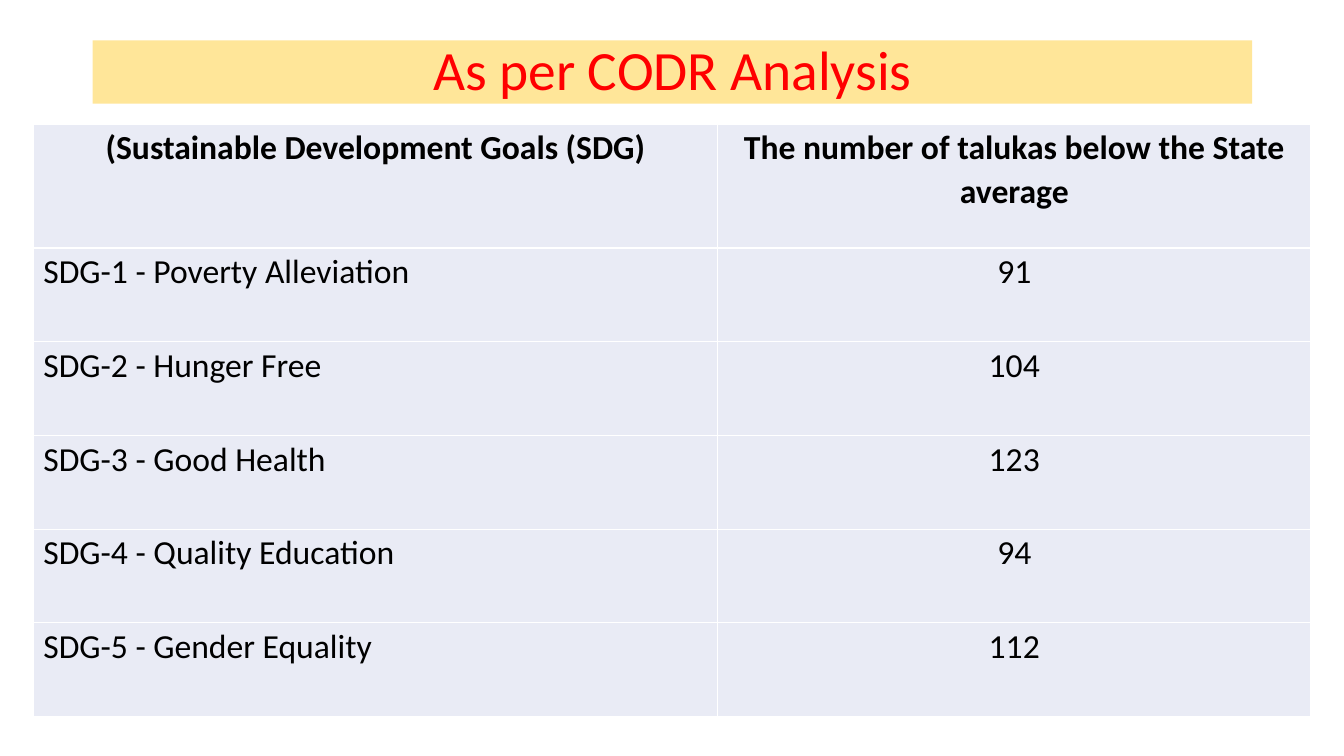
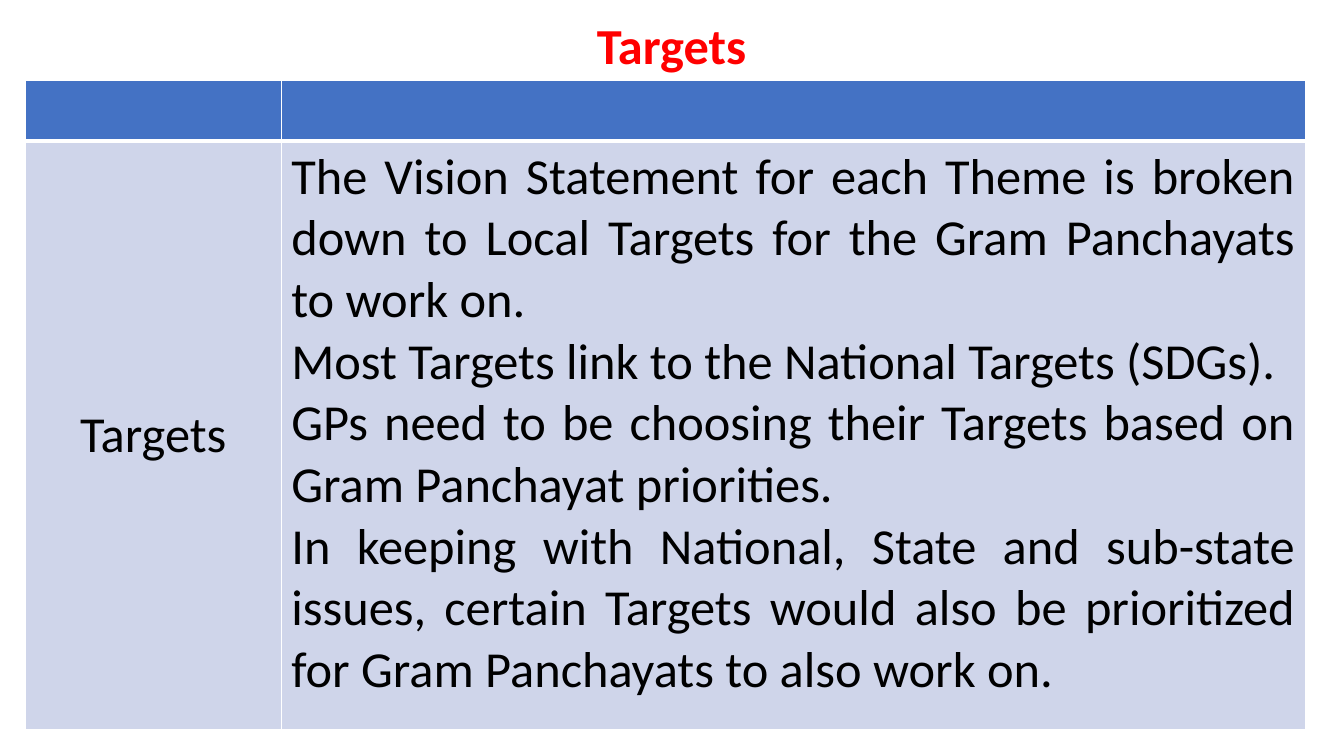
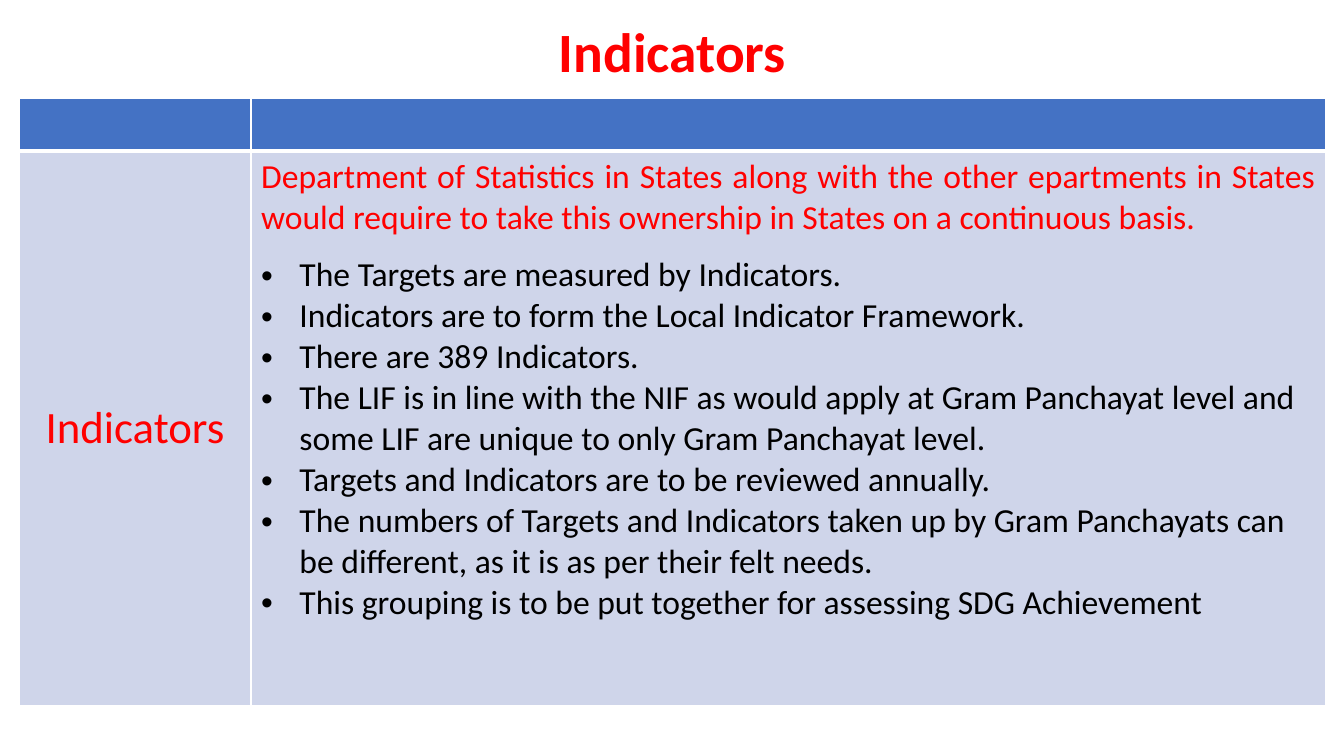
from lxml import etree
from pptx import Presentation
from pptx.dml.color import RGBColor
from pptx.enum.shapes import MSO_SHAPE
from pptx.enum.text import MSO_ANCHOR, PP_ALIGN
from pptx.oxml.ns import qn
from pptx.util import Emu, Pt

LEFT, MID, FULL = PP_ALIGN.LEFT, PP_ALIGN.CENTER, PP_ALIGN.JUSTIFY
TOP, CENTER = MSO_ANCHOR.TOP, MSO_ANCHOR.MIDDLE
RECT = MSO_SHAPE.RECTANGLE
FONT = "Calibri"
INK = {
    "red": "FF0000", "black": "000000", "white": "FFFFFF", "sand": "FFE699",
    "head": "4472C4", "body": "CFD5EA", "pale": "E9EBF5",
}


def px(n):
    return Emu(n * 9144)


def rgb(name):
    return RGBColor.from_string(INK[name])


def write(frame, text, size=24, ink="black", bold=False, align=LEFT,
          line=1.0, after=0, left=0, mark=None):
    para = frame.paragraphs[0]
    if para.runs:
        para = frame.add_paragraph()
    para.alignment = align
    para.line_spacing = line
    para.space_after = Pt(after)
    props = para._p.get_or_add_pPr()
    props.set("marL", str(px(left)))
    if mark:
        props.set("indent", str(-px(left)))
        etree.SubElement(props, qn("a:buFont"), typeface="Arial")
        etree.SubElement(props, qn("a:buChar"), char=mark)
    run = para.add_run()
    run.text = text
    font = run.font
    font.name, font.size, font.bold = FONT, Pt(size), bold
    font.color.rgb = rgb(ink)


class Deck:
    def __init__(self):
        self.show = Presentation()
        self.show.slide_width, self.show.slide_height = px(1333), px(750)
        self.slide = None

    def page(self):
        self.slide = self.show.slides.add_slide(self.show.slide_layouts[6])

    def title(self, text, box, size=39.6, bold=True, fill=None):
        shapes, place = self.slide.shapes, [px(n) for n in box]
        if fill:
            shape = shapes.add_shape(RECT, *place)
            shape.shadow.inherit = False
            shape.fill.solid()
            shape.fill.fore_color.rgb = rgb(fill)
            shape.line.fill.background()
        else:
            shape = shapes.add_textbox(*place)
        frame = shape.text_frame
        frame.word_wrap = True
        frame.vertical_anchor = CENTER
        write(frame, text, size, "red", bold, MID, line=0.9)

    def table(self, left, top, cols, rows):
        grid = self.slide.shapes.add_table(
            len(rows), len(cols), px(left), px(top),
            px(sum(cols)), px(sum(rows))).table
        grid.first_row = grid.horz_banding = False
        for col, width in zip(grid.columns, cols):
            col.width = px(width)
        for row, height in zip(grid.rows, rows):
            row.height = px(height)
        return grid

    def cell(self, cell, fill, anchor=TOP, edges=(1, 1, 1, 1)):
        cell.fill.solid()
        cell.fill.fore_color.rgb = rgb(fill)
        cell.vertical_anchor = anchor
        props = cell._tc.get_or_add_tcPr()
        for i, (side, width) in enumerate(zip("LRTB", edges)):
            edge = etree.Element(qn("a:ln" + side), w=str(Pt(width)))
            paint = etree.SubElement(edge, qn("a:solidFill"))
            etree.SubElement(paint, qn("a:srgbClr"), val=INK["white"])
            props.insert(i, edge)
        return cell.text_frame

    def goals(self, left, top, cols, rows, data):
        grid = self.table(left, top, cols, rows)
        for r, pair in enumerate(data):
            for c, text in enumerate(pair):
                cell = grid.cell(r, c)
                cell.margin_left = cell.margin_right = cell.margin_top = px(1)
                cell.margin_bottom = 0
                name = r > 0 and c == 0
                write(self.cell(cell, "pale"), text, bold=r == 0,
                      align=LEFT if name else MID, line=1.07, after=8,
                      left=9 if name else 0)

    def topic(self, left, top, cols, rows, label, size, ink):
        grid = self.table(left, top, cols, rows)
        for c in range(2):
            self.cell(grid.cell(0, c), "head", edges=(1, 1, 1, 3))
        edges = (1, 1, 3, 1)
        side = self.cell(grid.cell(1, 0), "body", CENTER, edges)
        write(side, label, size, ink, align=MID)
        return self.cell(grid.cell(1, 1), "body", edges=edges)


GOALS = [
    ("(Sustainable Development Goals (SDG)",
     "The number of talukas below the State average"),
    ("SDG-1 - Poverty Alleviation", "91"),
    ("SDG-2 - Hunger Free", "104"),
    ("SDG-3 - Good Health", "123"),
    ("SDG-4 - Quality Education", "94"),
    ("SDG-5 - Gender Equality", "112"),
]
TARGETS = [
    "The Vision Statement for each Theme is broken down to Local Targets for the Gram Panchayats to work on.",
    "Most Targets link to the National Targets (SDGs).",
    "GPs need to be choosing their Targets based on Gram Panchayat priorities.",
    "In keeping with National, State and sub-state issues, certain Targets would also be prioritized for Gram Panchayats to also work on.",
]
OWNER = "Department of Statistics in States along with the other epartments in States would require to take this ownership in States on a continuous basis."
POINTS = [
    "The Targets are measured by Indicators.",
    "Indicators are to form the Local Indicator Framework.",
    "There are 389 Indicators.",
    "The LIF is in line with the NIF as would apply at Gram Panchayat level and some LIF are unique to only Gram Panchayat level.",
    "Targets and Indicators are to be reviewed annually.",
    "The numbers of Targets and Indicators taken up by Gram Panchayats can be different, as it is as per their felt needs.",
    "This grouping is to be put together for assessing SDG Achievement",
]


def main():
    deck = Deck()

    deck.page()
    deck.title("As per CODR Analysis", (92, 40, 1150, 63), bold=False, fill="sand")
    deck.goals(33, 123, (679, 588), [123] + [93] * 5, GOALS)

    deck.page()
    deck.title("Targets", (37, 14, 1258, 67), size=36)
    frame = deck.topic(25, 80, (254, 1016), (60, 584), "Targets", 36, "black")
    for text in TARGETS:
        write(frame, text, 36, align=FULL)

    deck.page()
    deck.title("Indicators", (92, 20, 1150, 68))
    frame = deck.topic(19, 98, (230, 1066), (52, 550), "Indicators", 32, "red")
    write(frame, OWNER, ink="red", align=FULL, after=12)
    for text in POINTS:
        write(frame, text, left=38, mark="•")

    deck.show.save("out.pptx")


if __name__ == "__main__":
    main()
